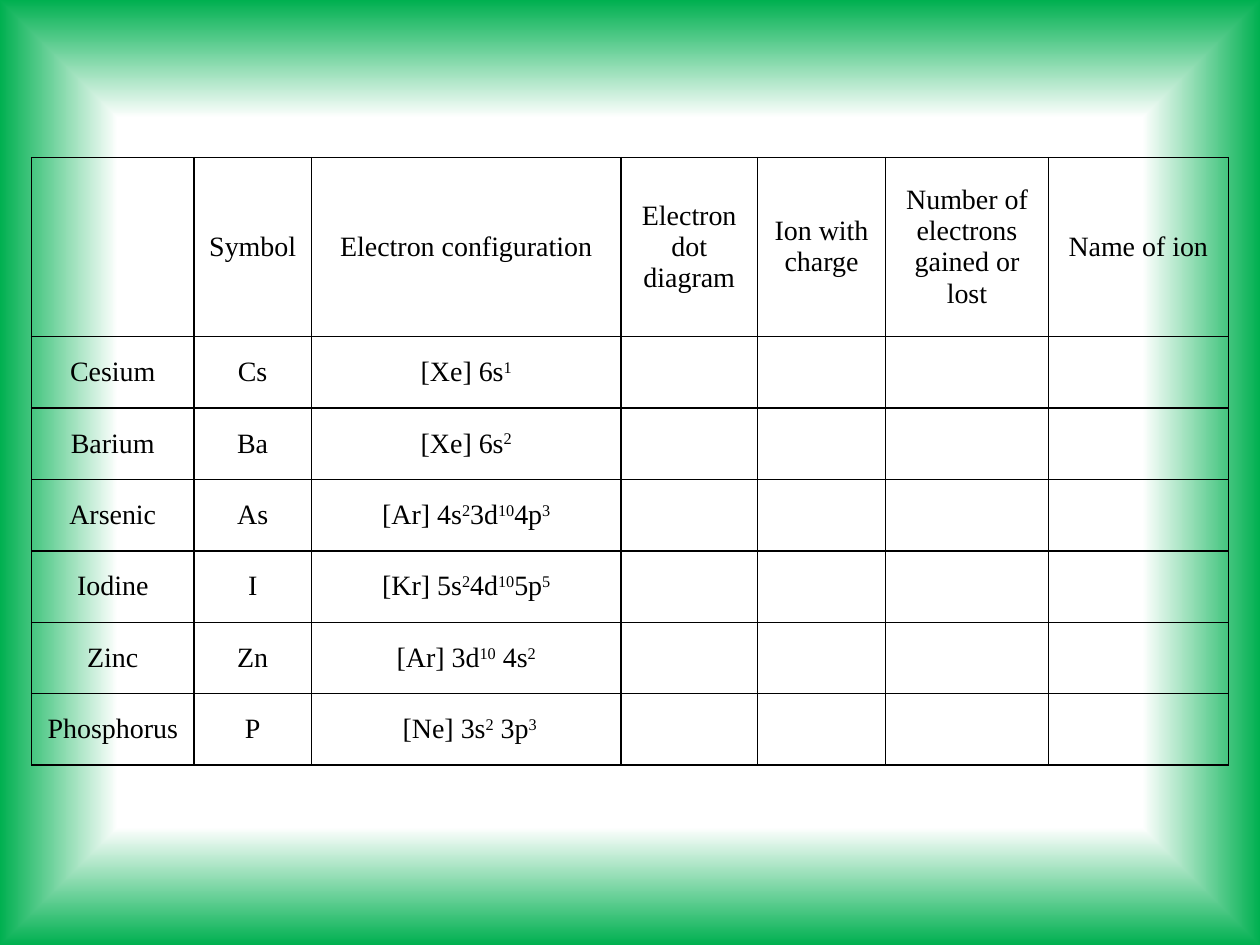
"""Build a slide with a table of elements, their electron configurations and ions to fill in."""
import pptx
import pptx.dml.color
import pptx.enum.text
import pptx.oxml
import pptx.oxml.ns
import pptx.util

Pt = pptx.util.Pt

HEADINGS = ["", "Symbol", "Electron configuration", "Electron dot diagram",
            "Ion with charge", "Number of electrons gained or lost", "Name of ion"]
ELEMENTS = [
    ("Cesium", "Cs", "[Xe] 6s^1"),
    ("Barium", "Ba", "[Xe] 6s^2"),
    ("Arsenic", "As", "[Ar] 4s^2^3d^10^4p^3"),
    ("Iodine", "I", "[Kr] 5s^2^4d^10^5p^5"),
    ("Zinc", "Zn", "[Ar] 3d^10^ 4s^2"),
    ("Phosphorus", "P", " [Ne] 3s^2^ 3p^3"),
]
COLUMN_WIDTHS = [92.9, 67, 177.1, 77.8, 73.4, 92.9, 102.9]
HEADING_HEIGHT, ELEMENT_HEIGHT = 102.2, 40.86
BACKGROUND_STOPS = [(0, "FFFFFF"), (75, "FFFFFF"), (100, "00B050")]
INK = "000000"
FONT = "Times New Roman"


def color(value):
    return pptx.dml.color.RGBColor.from_string(value)


def drawing_xml(tag, attributes, content):
    namespace = pptx.oxml.ns.nsdecls("a")
    return pptx.oxml.parse_xml(f"<a:{tag} {namespace} {attributes}>{content}</a:{tag}>")


def paint_background(page):
    page.background.fill.gradient()
    gradient = page.element.xpath(".//p:bg//a:gradFill")[0]
    stops = "".join(f'<a:gs pos="{position * 1000}"><a:srgbClr val="{value}"/></a:gs>'
                    for position, value in BACKGROUND_STOPS)
    center = '<a:fillToRect l="50000" t="50000" r="50000" b="50000"/>'
    content = f'<a:gsLst>{stops}</a:gsLst><a:path path="rect">{center}</a:path>'
    gradient.getparent().replace(gradient, drawing_xml("gradFill", 'rotWithShape="1"', content))


def draw_borders(cell):
    properties = cell._tc.get_or_add_tcPr()
    line = f'<a:solidFill><a:srgbClr val="{INK}"/></a:solidFill>'
    for index, side in enumerate(("lnL", "lnR", "lnT", "lnB")):
        properties.insert(index, drawing_xml(side, f'w="{Pt(1)}"', line))


def write_cell(cell, text):
    cell.fill.background()
    draw_borders(cell)
    cell.vertical_anchor = pptx.enum.text.MSO_ANCHOR.MIDDLE
    cell.margin_left = cell.margin_right = Pt(5)
    cell.margin_top = cell.margin_bottom = Pt(0)
    para = cell.text_frame.paragraphs[0]
    para.alignment = pptx.enum.text.PP_ALIGN.CENTER
    para.font.size = Pt(16)
    para.font.name = FONT
    para.font.color.rgb = color(INK)
    for index, part in enumerate(text.split("^")):
        if part:
            span = para.add_run()
            span.text = part
            if index % 2:
                span.font._element.set("baseline", "30000")


def add_element_table(page):
    rows = [HEADINGS] + [element + ("",) * (len(HEADINGS) - len(element)) for element in ELEMENTS]
    heights = [HEADING_HEIGHT] + [ELEMENT_HEIGHT] * len(ELEMENTS)
    table = page.shapes.add_table(len(rows), len(HEADINGS), Pt(18), Pt(90),
                                  Pt(sum(COLUMN_WIDTHS)), Pt(sum(heights))).table
    table.first_row = table.horz_banding = False
    for column, width in zip(table.columns, COLUMN_WIDTHS):
        column.width = Pt(width)
    for row, height, texts in zip(table.rows, heights, rows):
        row.height = Pt(height)
        for cell, text in zip(row.cells, texts):
            write_cell(cell, text)


def main():
    deck = pptx.Presentation()
    deck.slide_width, deck.slide_height = Pt(720), Pt(540)
    page = deck.slides.add_slide(deck.slide_layouts[6])
    paint_background(page)
    add_element_table(page)
    deck.save("out.pptx")


if __name__ == "__main__":
    main()
